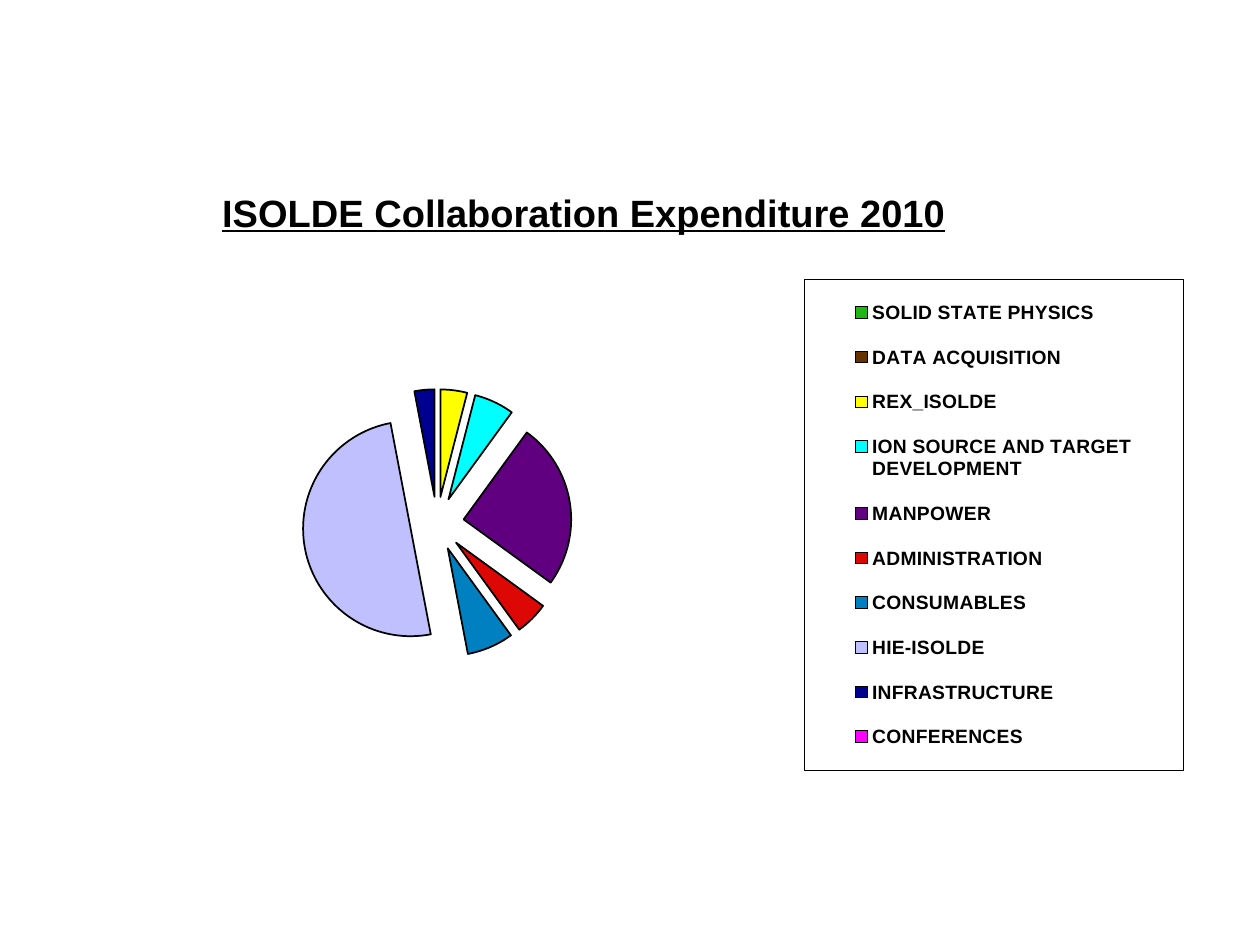
from dataclasses import dataclass

from pptx import Presentation
from pptx.chart.data import CategoryChartData
from pptx.dml.color import RGBColor
from pptx.enum.chart import XL_CHART_TYPE, XL_LEGEND_POSITION
from pptx.oxml import parse_xml
from pptx.oxml.ns import nsdecls, qn
from pptx.util import Pt


@dataclass(frozen=True)
class Theme:
    font: str = "Arial"
    ink: str = "000000"
    base_size: float = 10
    legend_size: float = 11
    title_size: float = 21.7
    slice_line: float = 1
    legend_line: float = 0.5


EXPENDITURE = [
    ("SOLID STATE PHYSICS", 0, "1FB714"),
    ("DATA ACQUISITION", 0, "663300"),
    ("REX_ISOLDE", 4, "FFFF00"),
    ("ION SOURCE AND TARGET DEVELOPMENT", 6, "00FFFF"),
    ("MANPOWER", 25, "600080"),
    ("ADMINISTRATION", 5, "DD0806"),
    ("CONSUMABLES", 7, "0080C0"),
    ("HIE-ISOLDE", 50, "C0C0FF"),
    ("INFRASTRUCTURE", 3, "000090"),
    ("CONFERENCES", 0, "FF00FF"),
]


def manual_layout(x, y, width=None, height=None, inner=False):
    """Return a c:layout element; all values are fractions of the chart."""
    parts = '<c:layoutTarget val="inner"/>' if inner else ""
    parts += '<c:xMode val="edge"/><c:yMode val="edge"/>'
    for tag, value in (("x", x), ("y", y), ("w", width), ("h", height)):
        if value is not None:
            parts += f'<c:{tag} val="{value}"/>'
    return parse_xml(f'<c:layout {nsdecls("c")}><c:manualLayout>{parts}'
                     '</c:manualLayout></c:layout>')


def place(element, layout, after=None):
    """Replace the layout of a chart part, behind the child named by after."""
    for old_layout in element.findall(qn("c:layout")):
        element.remove(old_layout)
    if after is None:
        element.insert(0, layout)
    else:
        element.find(qn(after)).addnext(layout)


class SlideBuilder:
    def __init__(self, slide, theme):
        self.slide = slide
        self.theme = theme

    def style_font(self, font, size, bold=False):
        font.name = self.theme.font
        font.size = Pt(size)
        font.bold = bold
        font.color.rgb = RGBColor.from_string(self.theme.ink)

    def pie_chart(self, rows, left, top, width, height):
        data = CategoryChartData(number_format="0")
        data.categories = [name for name, _, _ in rows]
        data.add_series("Series 1", [value for _, value, _ in rows])
        chart = self.slide.shapes.add_chart(
            XL_CHART_TYPE.PIE, Pt(left), Pt(top), Pt(width), Pt(height), data).chart
        self.style_font(chart.font, self.theme.base_size)
        chart.plots[0].vary_by_categories = True
        plot_area = chart.plots[0]._element.getparent()
        place(plot_area, manual_layout(0.05, 0.396, 0.573, 0.334, inner=True))
        return chart

    def outline_slice(self, chart_format):
        chart_format.line.color.rgb = RGBColor.from_string(self.theme.ink)
        chart_format.line.width = Pt(self.theme.slice_line)

    def slices(self, chart, colors, explosion):
        series = chart.plots[0].series[0]
        self.outline_slice(series.format)
        series._element.find(qn("c:spPr")).addnext(
            parse_xml(f'<c:explosion {nsdecls("c")} val="{explosion}"/>'))
        for index, color in enumerate(colors):
            point_format = series.points[index].format
            point_format.fill.solid()
            point_format.fill.fore_color.rgb = RGBColor.from_string(color)
            self.outline_slice(point_format)

    def chart_title(self, chart, text):
        title = chart.chart_title
        run = title.text_frame.paragraphs[0].add_run()
        run.text = text
        self.style_font(run.font, self.theme.title_size, bold=True)
        run.font.underline = True
        place(title._element, manual_layout(0.149, 0.138), after="c:tx")

    def legend(self, chart):
        chart.has_legend = True
        legend = chart.legend
        legend.position = XL_LEGEND_POSITION.RIGHT
        legend.include_in_layout = False
        self.style_font(legend.font, self.theme.legend_size, bold=True)
        element = legend._element
        place(element, manual_layout(0.647, 0.259, 0.32, 0.61), after="c:legendPos")
        element.find(qn("c:txPr")).addprevious(parse_xml(
            f'<c:spPr {nsdecls("c", "a")}><a:noFill/>'
            f'<a:ln w="{Pt(self.theme.legend_line)}"><a:solidFill>'
            f'<a:srgbClr val="{self.theme.ink}"/></a:solidFill></a:ln></c:spPr>'))


def main():
    presentation = Presentation()
    presentation.slide_width, presentation.slide_height = Pt(720), Pt(540)
    slide = presentation.slides.add_slide(presentation.slide_layouts[6])
    builder = SlideBuilder(slide, Theme())
    chart = builder.pie_chart(EXPENDITURE, 22.3, 40.3, 676, 460)
    builder.slices(chart, [color for _, _, color in EXPENDITURE], explosion=25)
    builder.chart_title(chart, "ISOLDE Collaboration Expenditure 2010")
    builder.legend(chart)
    presentation.save("out.pptx")


if __name__ == "__main__":
    main()
